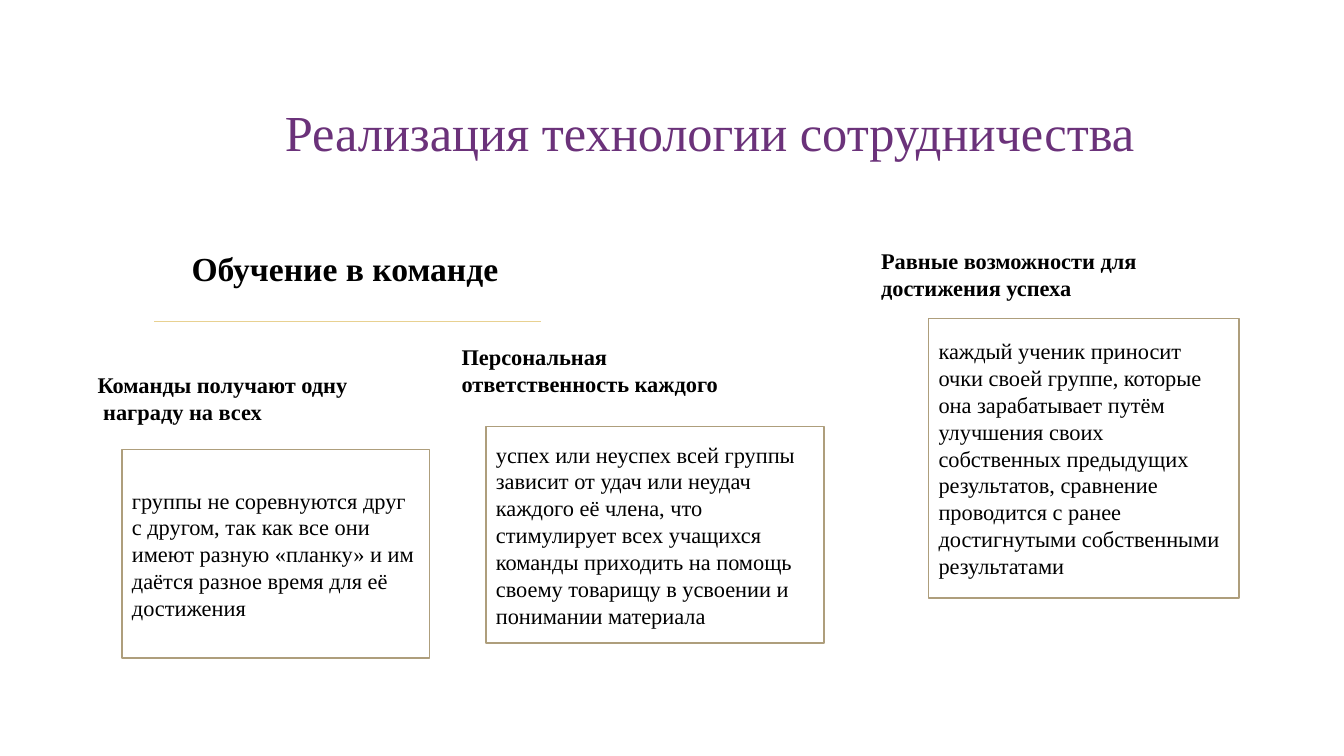
"""Build the slide on putting cooperative learning into practice."""
from dataclasses import dataclass

from lxml import etree
from pptx import Presentation
from pptx import util as u
from pptx.dml.color import RGBColor
from pptx.enum import shapes, text
from pptx.oxml.ns import qn

FONT = "Times New Roman"
PURPLE = RGBColor(0x6B, 0x32, 0x7A)
GOLD = RGBColor(0xE8, 0xD1, 0x91)
TAUPE = RGBColor(0xAE, 0x9E, 0x7C)
BLACK = RGBColor(0, 0, 0)
WHITE = RGBColor(0xFF, 0xFF, 0xFF)
LINE_WIDTH = u.Pt(1.25)


@dataclass(frozen=True)
class Box:
    left: float
    top: float
    width: float
    height: float

    def lengths(self) -> list[u.Length]:
        return [u.Inches(n) for n in (self.left, self.top, self.width, self.height)]


@dataclass(frozen=True)
class Principle:
    heading: list[str]
    heading_box: Box
    body: str
    body_box: Box


PRINCIPLES = [
    Principle(
        ["Команды получают одну", " награду на всех"],
        Box(0.87, 3.63, 2.92, 2.25),
        "группы не соревнуются друг с другом, так как все они имеют разную "
        "«планку» и им даётся разное время для её достижения",
        Box(1.21, 4.46, 3.05, 2.07),
    ),
    Principle(
        ["Персональная ответственность каждого"],
        Box(4.48, 3.36, 3.35, 1.73),
        "успех или неуспех всей группы зависит от удач или неудач каждого её "
        "члена, что стимулирует всех учащихся команды приходить на помощь "
        "своему товарищу в усвоении и понимании материала",
        Box(4.82, 4.23, 3.35, 2.15),
    ),
    Principle(
        ["Равные возможности для достижения успеха"],
        Box(8.64, 2.4, 3.31, 2.94),
        "каждый ученик приносит очки своей группе, которые она зарабатывает "
        "путём улучшения своих собственных предыдущих результатов, сравнение "
        "проводится с ранее достигнутыми собственными результатами",
        Box(9.21, 3.16, 3.08, 2.77),
    ),
]


def write(tf, lines: list[str], size: float, color: RGBColor = BLACK,
          bold: bool = False, align=text.PP_ALIGN.LEFT,
          anchor=text.MSO_ANCHOR.TOP) -> None:
    tf.word_wrap = True
    tf.vertical_anchor = anchor
    for i, line in enumerate(lines):
        p = tf.add_paragraph() if i else tf.paragraphs[0]
        p.alignment = align
        r = p.add_run()
        r.text = line
        r.font.name = FONT
        r.font.size = u.Pt(size)
        r.font.bold = bold
        r.font.color.rgb = color


def add_panel(s, box: Box, outlined: bool):
    sp = s.shapes.add_shape(shapes.MSO_SHAPE.RECTANGLE, *box.lengths())
    sp.shadow.inherit = False
    sp.fill.solid()
    sp.fill.fore_color.rgb = WHITE
    if outlined:
        sp.line.color.rgb = TAUPE
        sp.line.width = LINE_WIDTH
    else:
        sp.line.fill.background()
    return sp.text_frame


def add_principle(s, item: Principle) -> None:
    write(add_panel(s, item.heading_box, False), item.heading, 16, bold=True)
    write(add_panel(s, item.body_box, True), [item.body], 16,
          anchor=text.MSO_ANCHOR.MIDDLE)


def add_rule(s, left: float, right: float, y: float) -> None:
    line = s.shapes.add_connector(
        shapes.MSO_CONNECTOR.STRAIGHT,
        u.Inches(left), u.Inches(y), u.Inches(right), u.Inches(y))
    line.line.color.rgb = GOLD
    line.line.width = LINE_WIDTH
    etree.SubElement(line._element.spPr, qn("a:effectLst"))


def add_title(s, box: Box, title: str) -> None:
    sp = s.shapes.title
    sp.left, sp.top, sp.width, sp.height = box.lengths()
    sp.text_frame.margin_left = u.Inches(0.6)
    write(sp.text_frame, [title], 36, PURPLE, align=text.PP_ALIGN.CENTER,
          anchor=text.MSO_ANCHOR.MIDDLE)


def add_subtitle(s, box: Box, subtitle: str) -> None:
    tf = s.shapes.add_textbox(*box.lengths()).text_frame
    tf.margin_left = u.Inches(0.6)
    write(tf, [subtitle], 24, bold=True)


def main() -> None:
    prs = Presentation()
    prs.slide_width, prs.slide_height = u.Inches(13.33), u.Inches(7.5)
    s = prs.slides.add_slide(prs.slide_layouts[5])
    add_rule(s, 1.53, 5.37, 3.19)
    add_title(s, Box(1.54, 0.59, 10.5, 1.43), "Реализация технологии сотрудничества")
    add_subtitle(s, Box(1.3, 2.41, 4.33, 0.5), "Обучение в команде")
    for item in PRINCIPLES:
        add_principle(s, item)
    prs.save("out.pptx")


if __name__ == "__main__":
    main()
